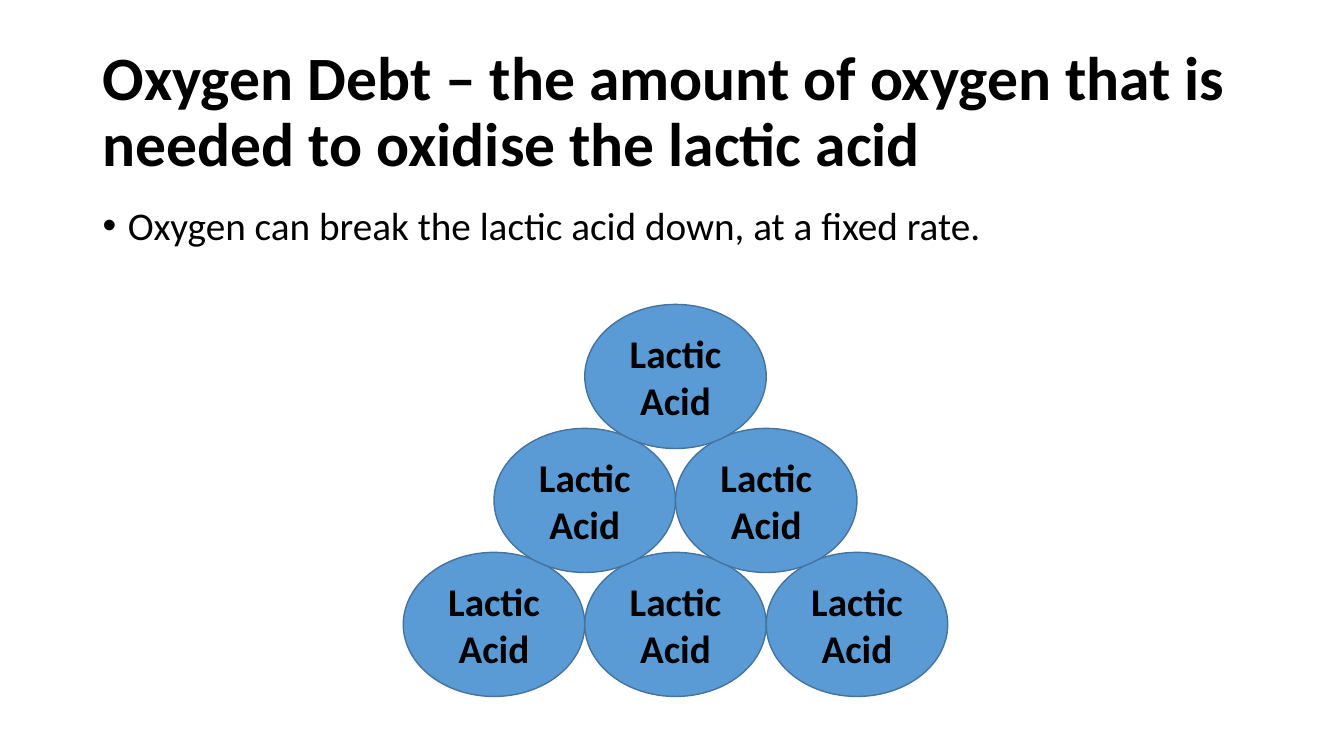
from dataclasses import dataclass

from lxml import etree
from pptx import Presentation
from pptx.dml.color import RGBColor
from pptx.enum.shapes import MSO_SHAPE
from pptx.enum.text import MSO_ANCHOR, MSO_AUTO_SIZE, PP_ALIGN
from pptx.oxml.ns import qn
from pptx.util import Inches, Pt

ELLIPSE = MSO_SHAPE.OVAL
TOP, MIDDLE = MSO_ANCHOR.TOP, MSO_ANCHOR.MIDDLE
LEFT, CENTER = PP_ALIGN.LEFT, PP_ALIGN.CENTER
NO_AUTOFIT = MSO_AUTO_SIZE.NONE
TITLE_ONLY = 5


@dataclass(frozen=True)
class Theme:
    font: str = "Calibri"
    text: RGBColor = RGBColor(0x00, 0x00, 0x00)
    background: RGBColor = RGBColor(0xFF, 0xFF, 0xFF)
    fill: RGBColor = RGBColor(0x5B, 0x9B, 0xD5)
    outline: RGBColor = RGBColor(0x43, 0x73, 0x9E)
    title_size: int = 44
    body_size: int = 28


def write_text(tf, text, theme, *, size, bold=False, align=LEFT, anchor=TOP,
               line_spacing=1.0, space_before=0):
    tf.auto_size = NO_AUTOFIT
    tf.word_wrap = True
    tf.vertical_anchor = anchor
    p = tf.paragraphs[0]
    p.alignment = align
    p.line_spacing = line_spacing
    p.space_before = Pt(space_before)
    r = p.add_run()
    r.text = text
    r.font.name = theme.font
    r.font.size = Pt(size)
    r.font.bold = bold
    r.font.color.rgb = theme.text
    return p


def add_bullet(p, indent):
    pPr = p._p.get_or_add_pPr()
    pPr.set("marL", str(indent))
    pPr.set("indent", str(-indent))
    etree.SubElement(pPr, qn("a:buFont")).set("typeface", "Arial")
    etree.SubElement(pPr, qn("a:buChar")).set("char", "•")


class SlideBuilder:
    def __init__(self, prs, theme):
        self.theme = theme
        self.slide = prs.slides.add_slide(prs.slide_layouts[TITLE_ONLY])
        background = self.slide.background.fill
        background.solid()
        background.fore_color.rgb = theme.background

    def title(self, text, left, top, width, height):
        sp = self.slide.shapes.title
        sp.left, sp.top = Inches(left), Inches(top)
        sp.width, sp.height = Inches(width), Inches(height)
        write_text(sp.text_frame, text, self.theme, size=self.theme.title_size,
                   bold=True, anchor=MIDDLE, line_spacing=0.9)

    def bullet(self, text, left, top, width, height):
        sp = self.slide.shapes.add_textbox(
            Inches(left), Inches(top), Inches(width), Inches(height))
        p = write_text(sp.text_frame, text, self.theme,
                       size=self.theme.body_size, line_spacing=0.9,
                       space_before=10)
        add_bullet(p, Inches(0.25))

    def ellipse(self, text, left, top, width, height):
        sp = self.slide.shapes.add_shape(
            ELLIPSE, Inches(left), Inches(top), Inches(width), Inches(height))
        sp.shadow.inherit = False
        sp.fill.solid()
        sp.fill.fore_color.rgb = self.theme.fill
        sp.line.color.rgb = self.theme.outline
        sp.line.width = Pt(1)
        write_text(sp.text_frame, text, self.theme, size=self.theme.body_size,
                   bold=True, align=CENTER, anchor=MIDDLE)

    def pyramid(self, text, rows, center, top, row_step, width, height):
        """Stack rows of touching ellipses, drawn from the widest row up."""
        for row in reversed(range(rows)):
            left = center - (row + 1) * width / 2
            for column in range(row + 1):
                self.ellipse(text, left + column * width, top + row * row_step,
                             width, height)


def main():
    prs = Presentation()
    prs.slide_width, prs.slide_height = Inches(13.33), Inches(7.5)
    s = SlideBuilder(prs, Theme())
    s.title("Oxygen Debt – the amount of oxygen that is needed to oxidise "
            "the lactic acid", 0.92, 0.4, 11.5, 1.45)
    s.bullet("Oxygen can break the lactic acid down, at a fixed rate.",
             0.92, 2, 11.5, 4.76)
    s.pyramid("Lactic Acid", rows=3, center=6.7, top=3.02, row_step=1.23,
              width=1.8, height=1.43)
    prs.save("out.pptx")


if __name__ == "__main__":
    main()
